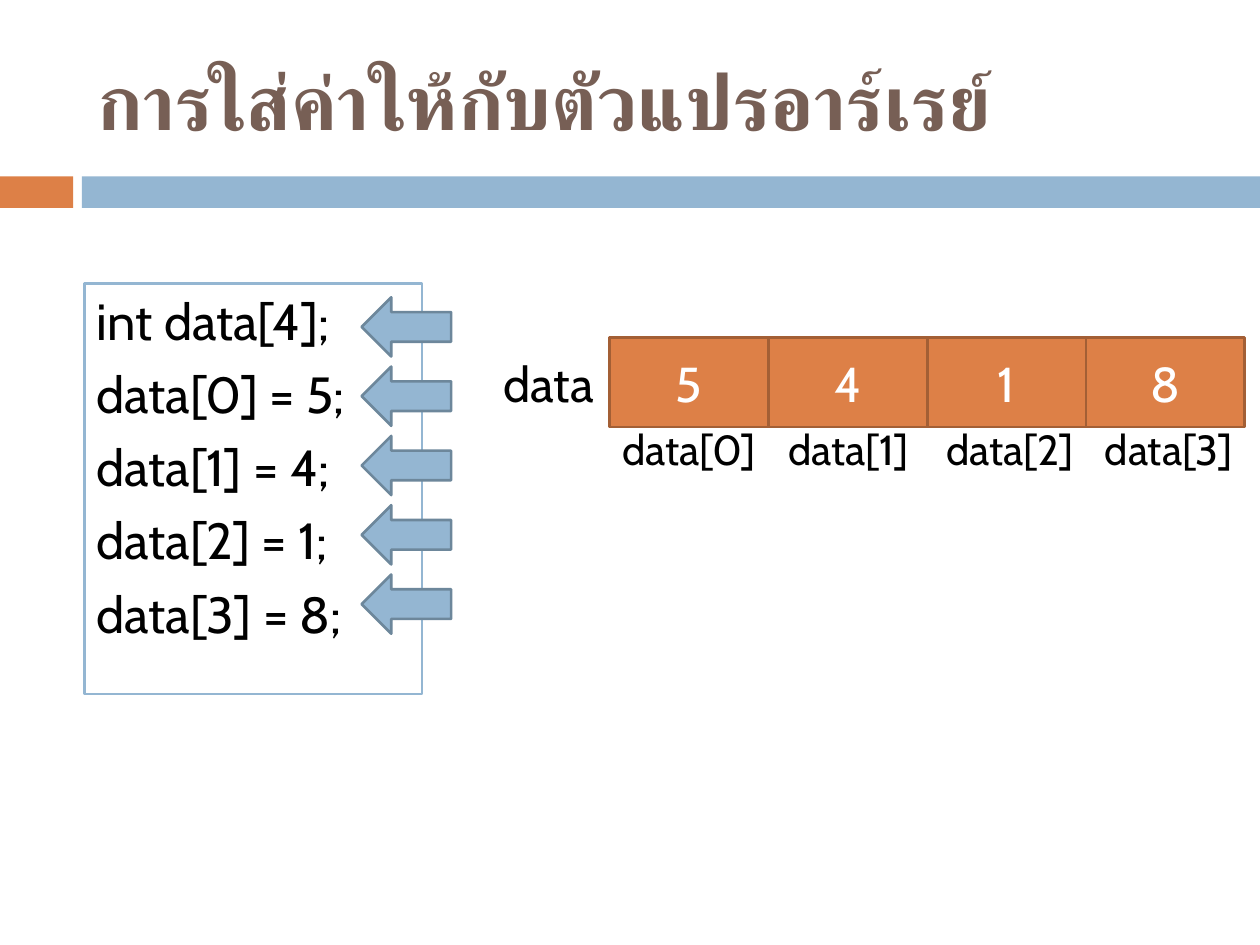
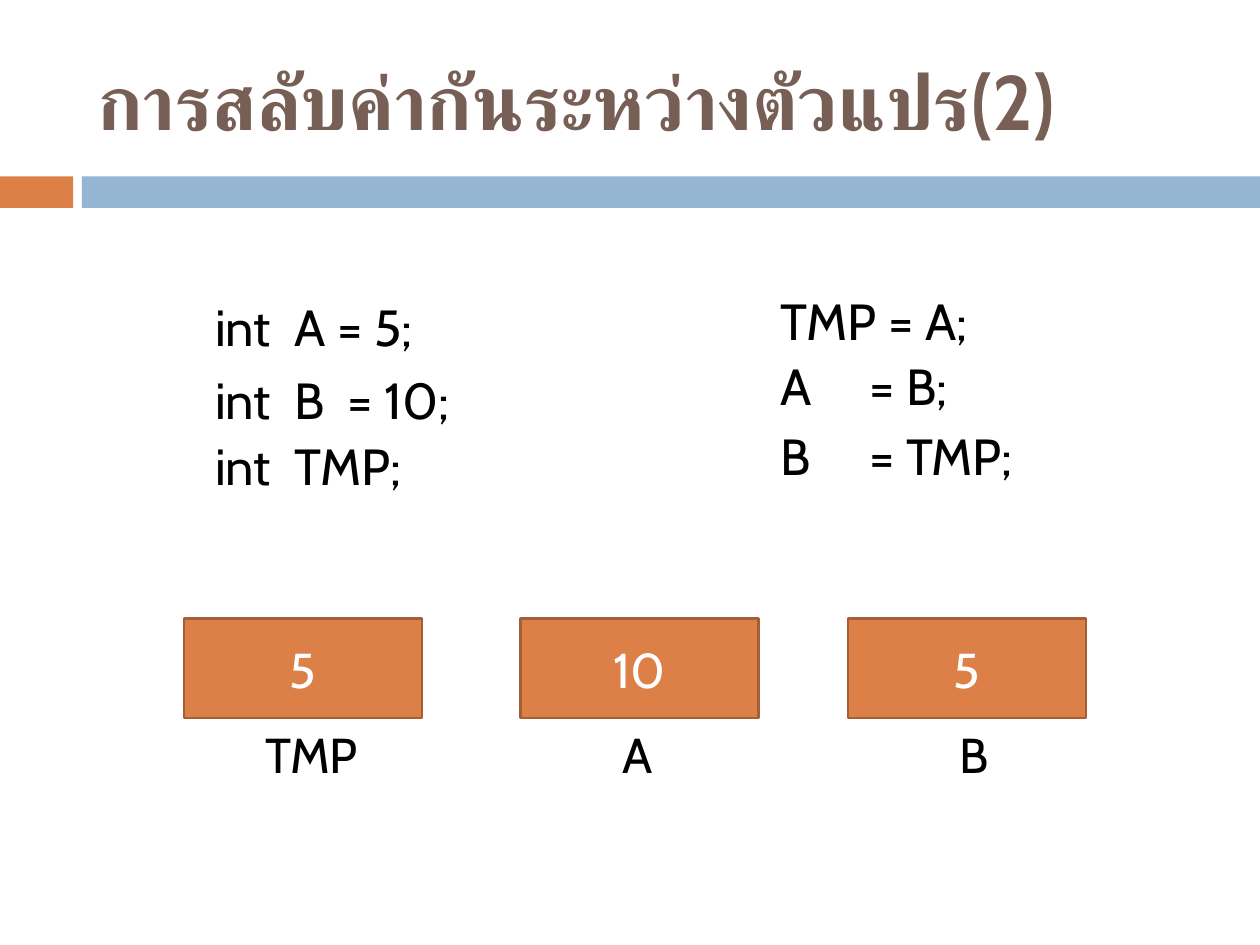
"""Build two slides on filling an array and swapping two variables."""
from lxml import etree
from pptx import Presentation
from pptx.dml.color import RGBColor
from pptx.enum.shapes import MSO_SHAPE
from pptx.enum.text import MSO_ANCHOR, MSO_AUTO_SIZE, PP_ALIGN
from pptx.oxml.ns import qn
from pptx.util import Inches, Pt

RECTANGLE, LEFT_ARROW = MSO_SHAPE.RECTANGLE, MSO_SHAPE.LEFT_ARROW
TOP, MIDDLE = MSO_ANCHOR.TOP, MSO_ANCHOR.MIDDLE
LEFT, CENTER = PP_ALIGN.LEFT, PP_ALIGN.CENTER
NO_AUTOFIT = MSO_AUTO_SIZE.NONE

FONT = "Cabin"
ORANGE, ORANGE_EDGE = "DD8047", "A35F35"
BLUE, BLUE_EDGE = "94B6D2", "6D879B"
BROWN, BLACK, WHITE = "775F55", "000000", "FFFFFF"
CODE_SIZE, CODE_GAP = 29, 7
VALUE_SIZE, INDEX_SIZE = 28, 24


def add_block(slide, kind, position, fill, edge=None):
    """Add a filled preset shape, with an outline if an edge colour is given."""
    shape = slide.shapes.add_shape(kind, *map(Inches, position))
    shape.shadow.inherit = False
    shape.fill.solid()
    shape.fill.fore_color.rgb = RGBColor.from_string(fill)
    if edge:
        shape.line.color.rgb = RGBColor.from_string(edge)
        shape.line.width = Pt(1.5)
    else:
        shape.line.fill.background()
    return shape


def write(shape, lines, size, color=BLACK, align=LEFT, anchor=TOP, gap=0, tabs=()):
    """Fill a shape with one paragraph a line, with tab stops in inches."""
    frame = shape.text_frame
    frame.text = "\n".join(lines)
    frame.word_wrap = True
    frame.auto_size = NO_AUTOFIT
    frame.vertical_anchor = anchor
    for paragraph in frame.paragraphs:
        paragraph.alignment = align
        paragraph.space_before = Pt(gap)
        if tabs:
            properties = paragraph._p.get_or_add_pPr()
            tab_list = etree.SubElement(properties, qn("a:tabLst"))
            for stop in tabs:
                etree.SubElement(tab_list, qn("a:tab"), pos=str(Inches(stop)), algn="l")
        paragraph.font.name = FONT
        paragraph.font.size = Pt(size)
        paragraph.font.color.rgb = RGBColor.from_string(color)


presentation = Presentation()
presentation.slide_width = Inches(10)
presentation.slide_height = Inches(7.5)

slides = []
for heading in ("การใส่ค่าให้กับตัวแปรอาร์เรย์", "การสลับค่ากันระหว่างตัวแปร(2)"):
    slide = presentation.slides.add_slide(presentation.slide_layouts[5])
    add_block(slide, RECTANGLE, (0, 1.4, 0.58, 0.25), ORANGE)
    add_block(slide, RECTANGLE, (0.65, 1.4, 9.35, 0.25), BLUE)
    title = slide.shapes.title
    title.left, title.top, title.width, title.height = map(Inches, (0.67, 0.25, 8.92, 1.08))
    write(title, [heading], 44, BROWN, anchor=MIDDLE)
    title.text_frame.paragraphs[0].font.bold = True
    slides.append(slide)
array_slide, swap_slide = slides

statements = ["int data[4];", "data[0] = 5;", "data[1] = 4;", "data[2] = 1;", "data[3] = 8;"]
code_box = add_block(array_slide, RECTANGLE, (0.67, 2.25, 2.68, 3.26), WHITE, BLUE)
write(code_box, statements, CODE_SIZE, gap=CODE_GAP)
for row in range(len(statements)):
    add_block(array_slide, LEFT_ARROW, (2.87, 2.36 + 0.55 * row, 0.71, 0.47), BLUE, BLUE_EDGE)

array_name = array_slide.shapes.add_textbox(*map(Inches, (3.9, 2.76, 1.02, 0.57)))
write(array_name, ["data"], VALUE_SIZE)
cell_width = 1.26
for index, (value, label_left) in enumerate(zip("5418", (4.84, 6.16, 7.41, 8.67))):
    cell_left = 4.84 + cell_width * index
    cell = add_block(array_slide, RECTANGLE, (cell_left, 2.68, cell_width, 0.71), ORANGE, ORANGE_EDGE)
    write(cell, [value], VALUE_SIZE, WHITE, CENTER, MIDDLE)
    label = array_slide.shapes.add_textbox(*map(Inches, (label_left, 3.31, 1.42, 0.5)))
    write(label, [f"data[{index}]"], INDEX_SIZE)

for position, lines, tabs in (
    ((1.61, 2.3, 2.36, 1.29), ["int\tA = 5;", "int\tB\t= 10;"], (0.63, 1.05)),
    ((1.61, 3.4, 2.36, 0.74), ["int\tTMP;"], (0.63,)),
    ((6.1, 2.25, 2.36, 0.74), ["TMP = A;"], ()),
    ((6.1, 2.77, 2.36, 0.74), ["A\t= B;"], (0.7,)),
    ((6.1, 3.32, 2.36, 0.74), ["B\t= TMP;"], (0.7,)),
):
    code = swap_slide.shapes.add_textbox(*map(Inches, position))
    write(code, lines, CODE_SIZE, gap=CODE_GAP, tabs=tabs)

for name, value, box_left, name_left, name_width in (
    ("TMP", "5", 1.46, 2.01, 1.1),
    ("A", "10", 4.13, 4.84, 0.55),
    ("B", "5", 6.73, 7.52, 0.55),
):
    variable = add_block(swap_slide, RECTANGLE, (box_left, 4.91, 1.89, 0.79), ORANGE, ORANGE_EDGE)
    write(variable, [value], VALUE_SIZE, WHITE, CENTER, MIDDLE)
    label = swap_slide.shapes.add_textbox(*map(Inches, (name_left, 5.7, name_width, 0.57)))
    write(label, [name], VALUE_SIZE)

presentation.save("out.pptx")
